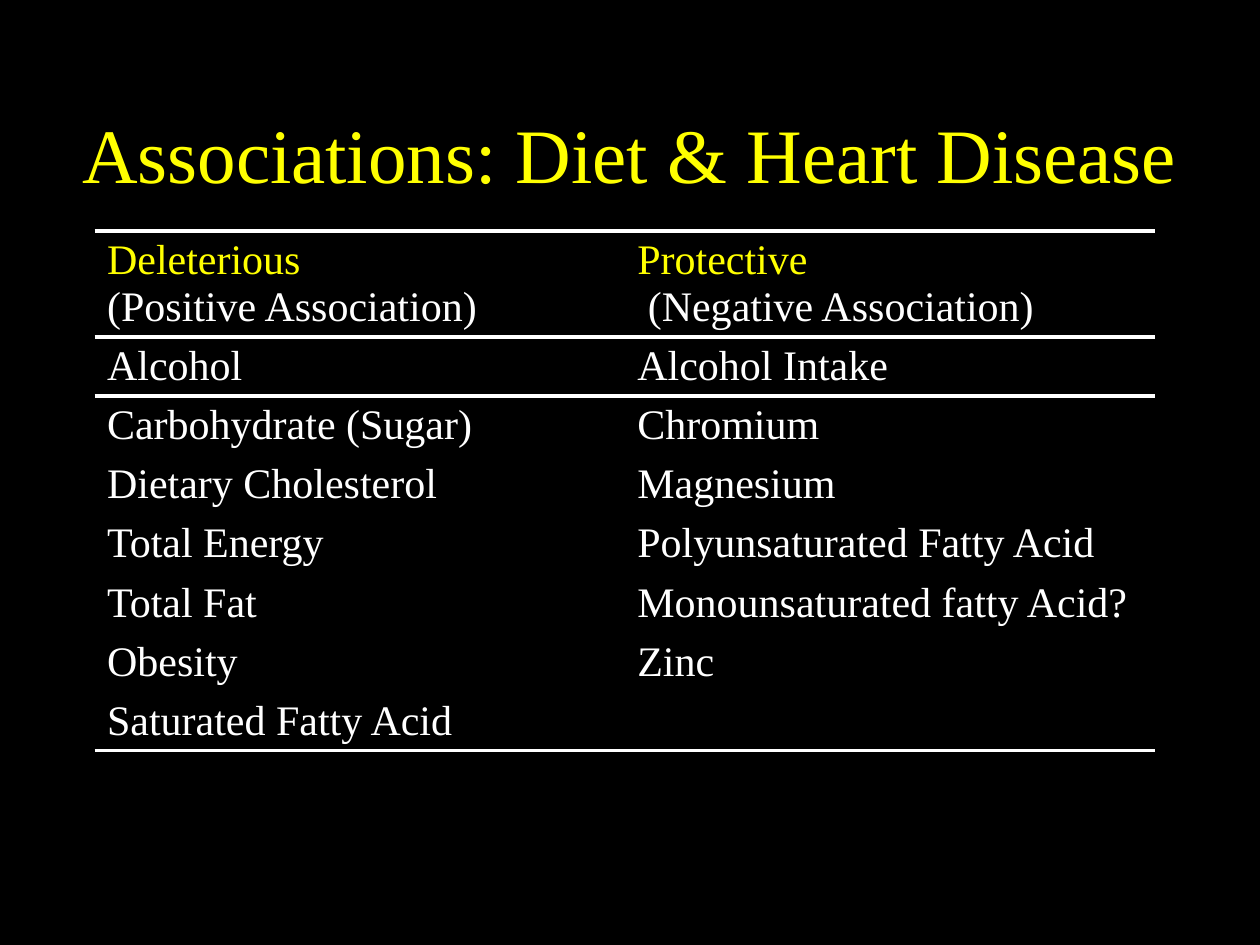
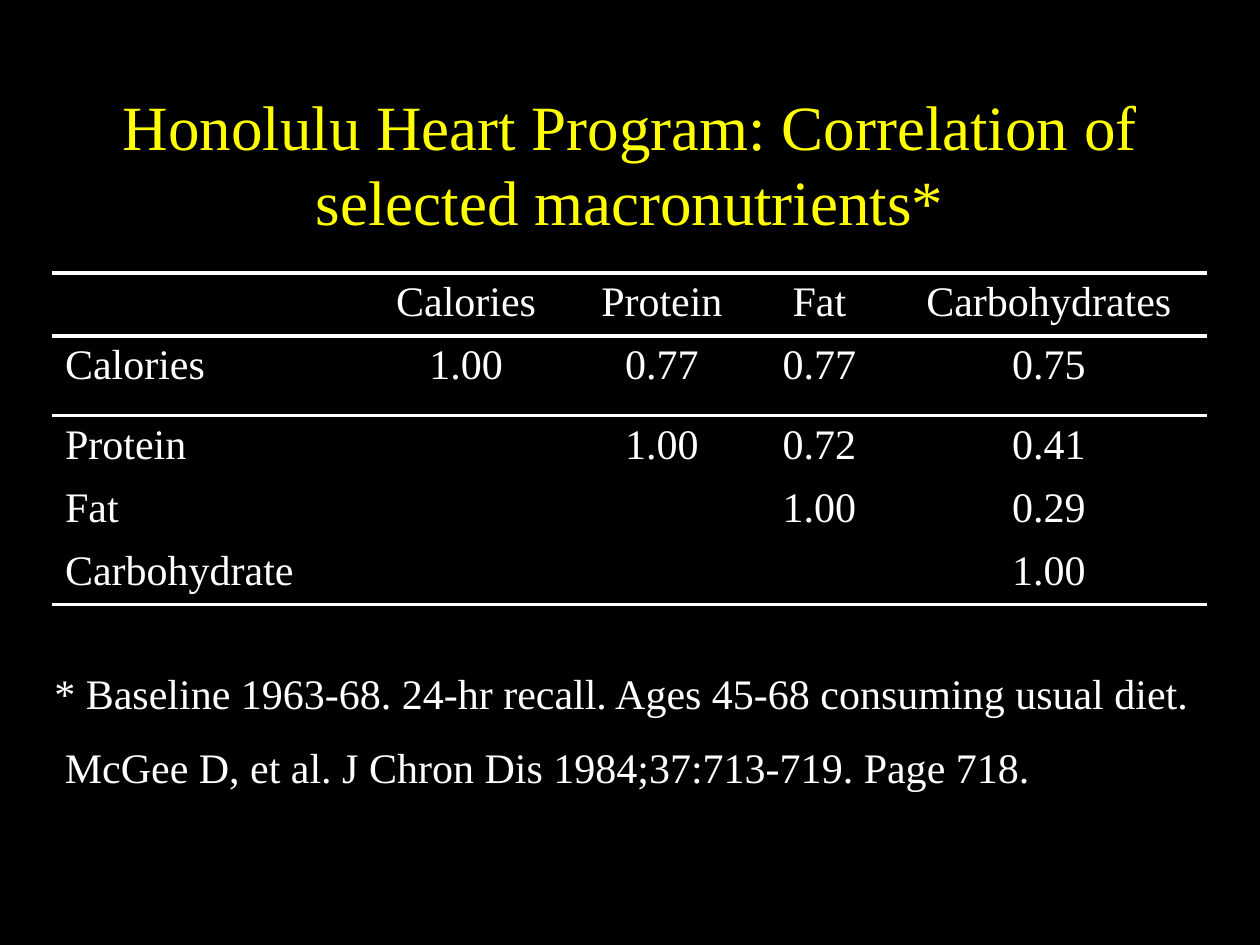
import dataclasses

import lxml.etree
import pptx
import pptx.dml.color
import pptx.enum.text
import pptx.oxml.ns
import pptx.util

COLORS = {"background": "000000", "title": "FFFF00", "body": "FFFFFF"}
FONT = "Times New Roman"
BODY_SIZE = 24
RULE_WIDTH = 2.25
WIDTH, HEIGHT = pptx.util.Inches(10), pptx.util.Inches(7.5)
GRID_COLUMNS, GRID_ROWS = 120, 90
ALIGN = pptx.enum.text.PP_ALIGN
ANCHOR = pptx.enum.text.MSO_ANCHOR
AUTO_SIZE = pptx.enum.text.MSO_AUTO_SIZE


@dataclasses.dataclass(frozen=True)
class Box:
    """A place on the slide, in grid columns and rows."""
    col: float
    row: float
    cols: float
    rows: float

    def emu(self) -> tuple[int, int, int, int]:
        return across(self.col), down(self.row), across(self.cols), down(self.rows)


@dataclasses.dataclass(frozen=True)
class Title:
    text: str
    box: Box
    size: int


@dataclasses.dataclass(frozen=True)
class Grid:
    """A table: a header, a set-off first row, then plain rows."""
    col: float
    row: float
    widths: list[float]
    heights: list[float]
    cells: list[list[str]]
    value_align: ALIGN = ALIGN.LEFT
    lead_color: str = "body"


@dataclasses.dataclass(frozen=True)
class Note:
    text: str
    box: Box


def across(cols: float) -> int:
    return round(WIDTH * cols / GRID_COLUMNS)


def down(rows: float) -> int:
    return round(HEIGHT * rows / GRID_ROWS)


def rgb(name: str) -> pptx.dml.color.RGBColor:
    return pptx.dml.color.RGBColor.from_string(COLORS[name])


def write(tf, text: str, *, size: int = BODY_SIZE, color: str = "body",
          lead_color: str = "", align: ALIGN = ALIGN.LEFT) -> None:
    """Write one paragraph per line; lead_color colours the first line."""
    for i, line in enumerate(text.split("\n")):
        p = tf.paragraphs[0] if i == 0 else tf.add_paragraph()
        p.alignment = align
        r = p.add_run()
        r.text = line
        r.font.name = FONT
        r.font.size = pptx.util.Pt(size)
        r.font.color.rgb = rgb(lead_color if lead_color and i == 0 else color)


def set_borders(cell, *, top: bool, bottom: bool) -> None:
    """Rule the chosen edges and clear the others."""
    tc_pr = cell._tc.get_or_add_tcPr()
    qn = pptx.oxml.ns.qn
    for tag, ruled in (("lnL", False), ("lnR", False), ("lnT", top), ("lnB", bottom)):
        ln = lxml.etree.SubElement(tc_pr, qn(f"a:{tag}"))
        if ruled:
            ln.set("w", str(pptx.util.Pt(RULE_WIDTH)))
            fill = lxml.etree.SubElement(ln, qn("a:solidFill"))
            lxml.etree.SubElement(fill, qn("a:srgbClr"), val=COLORS["body"])
        else:
            lxml.etree.SubElement(ln, qn("a:noFill"))


def add_title(slide, title: Title) -> None:
    sp = slide.shapes.title
    sp.left, sp.top, sp.width, sp.height = title.box.emu()
    tf = sp.text_frame
    tf.word_wrap = True
    tf.auto_size = AUTO_SIZE.NONE
    tf.vertical_anchor = ANCHOR.MIDDLE
    write(tf, title.text, size=title.size, color="title", align=ALIGN.CENTER)


def add_grid(slide, grid: Grid) -> None:
    box = Box(grid.col, grid.row, sum(grid.widths), sum(grid.heights))
    count = len(grid.heights)
    table = slide.shapes.add_table(count, len(grid.widths), *box.emu()).table
    table.first_row = table.horz_banding = False
    for column, width in zip(table.columns, grid.widths):
        column.width = across(width)
    for row, height in zip(table.rows, grid.heights):
        row.height = down(height)
    ruled_edges = {0, 1, 2, count}
    for i, texts in enumerate(grid.cells):
        for j, text in enumerate(texts):
            cell = table.cell(i, j)
            set_borders(cell, top=i in ruled_edges, bottom=i + 1 in ruled_edges)
            cell.fill.background()
            if text:
                write(cell.text_frame, text,
                      lead_color=grid.lead_color if i == 0 else "",
                      align=grid.value_align if j else ALIGN.LEFT)


def add_note(slide, note: Note) -> None:
    tf = slide.shapes.add_textbox(*note.box.emu()).text_frame
    tf.word_wrap = True
    tf.auto_size = AUTO_SIZE.SHAPE_TO_FIT_TEXT
    write(tf, note.text)


DIET = Grid(
    9, 22, [50.5] * 2, [10.1] + [5.6] * 7,
    [
        ["Deleterious\n(Positive Association)", "Protective\n (Negative Association)"],
        ["Alcohol", "Alcohol Intake"],
        ["Carbohydrate (Sugar)", "Chromium"],
        ["Dietary Cholesterol", "Magnesium"],
        ["Total Energy", "Polyunsaturated Fatty Acid"],
        ["Total Fat", "Monounsaturated fatty Acid?"],
        ["Obesity", "Zinc"],
        ["Saturated Fatty Acid", ""],
    ],
    lead_color="title",
)
CORRELATIONS = Grid(
    5, 26, [29, 20.8, 16.5, 13.5, 30.2], [6, 7.6, 6, 6, 6],
    [
        ["", "Calories", "Protein", "Fat", "Carbohydrates"],
        ["Calories", "1.00", "0.77", "0.77", "0.75"],
        ["Protein", "", "1.00", "0.72", "0.41"],
        ["Fat", "", "", "1.00", "0.29"],
        ["Carbohydrate", "", "", "", "1.00"],
    ],
    value_align=ALIGN.CENTER,
)
SLIDES = [
    (Title("Associations: Diet & Heart Disease", Box(4, 7, 112, 15), 44), DIET, []),
    (Title("Honolulu Heart Program: Correlation of selected macronutrients*",
           Box(9, 8, 102, 15), 36),
     CORRELATIONS,
     [Note("* Baseline 1963-68. 24-hr recall. Ages 45-68 consuming usual diet.",
           Box(4, 63, 114, 6)),
      Note("McGee D, et al. J Chron Dis 1984;37:713-719. Page 718.",
           Box(5, 70, 110, 11))]),
]


def main() -> None:
    prs = pptx.Presentation()
    prs.slide_width, prs.slide_height = WIDTH, HEIGHT
    background = prs.slide_master.background.fill
    background.solid()
    background.fore_color.rgb = rgb("background")
    title_only = prs.slide_layouts.get_by_name("Title Only")
    for title, grid, notes in SLIDES:
        slide = prs.slides.add_slide(title_only)
        add_title(slide, title)
        add_grid(slide, grid)
        for note in notes:
            add_note(slide, note)
    prs.save("out.pptx")


if __name__ == "__main__":
    main()
